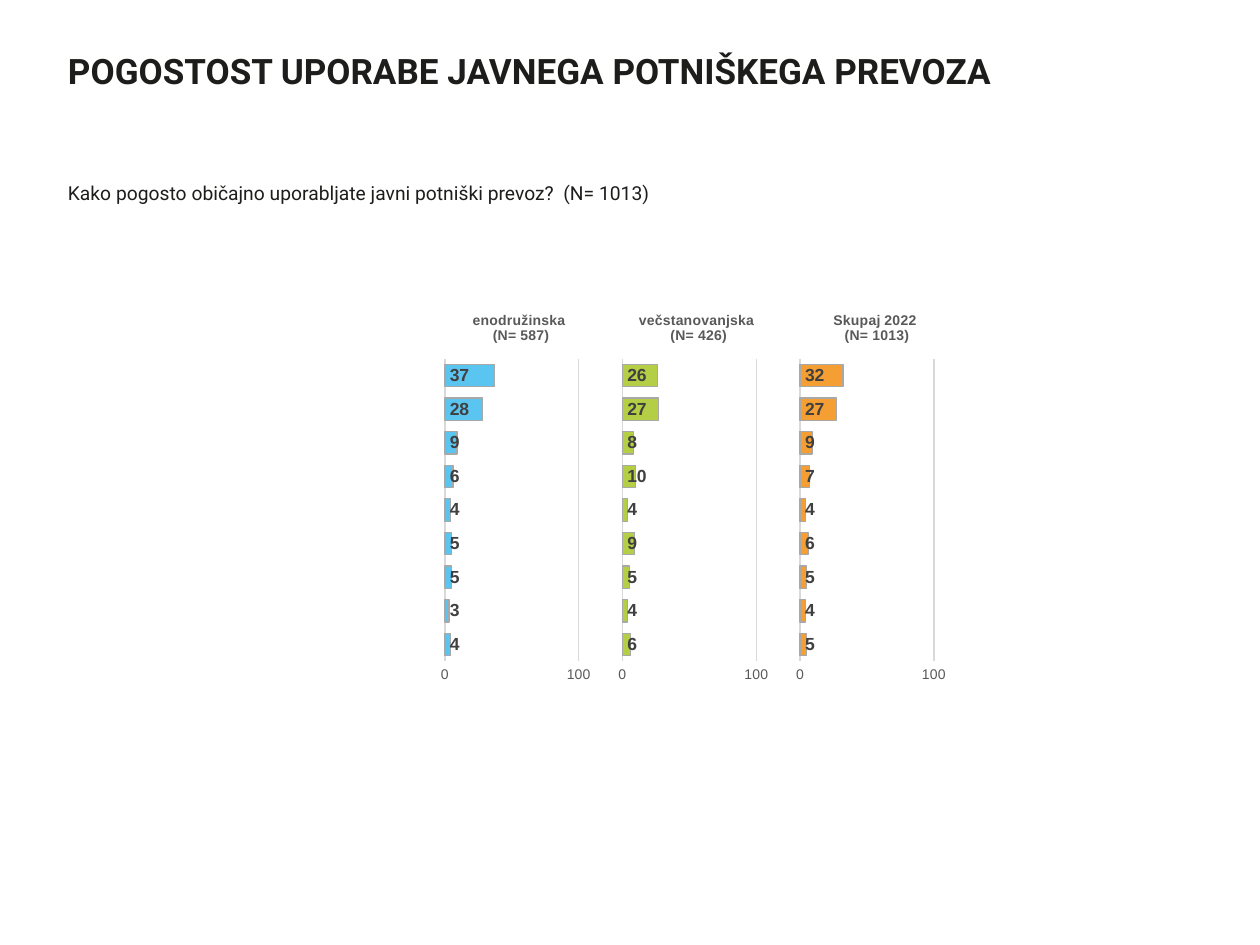
from lxml import etree
from pptx import Presentation
from pptx import util as u
from pptx.chart.data import CategoryChartData
from pptx.dml.color import RGBColor
from pptx.enum import chart as charts, text
from pptx.oxml import parse_xml
from pptx.oxml.ns import nsdecls, qn

INK = RGBColor(0x1D, 0x1D, 0x1B)
GREY = RGBColor(0x59, 0x59, 0x59)
LABEL = RGBColor(0x40, 0x40, 0x40)
GRID = RGBColor(0xD9, 0xD9, 0xD9)
OUTLINE = RGBColor(0xA8, 0xA8, 0xA7)
BLACK = RGBColor(0, 0, 0)
BLUE = RGBColor(0x5B, 0xC5, 0xF2)
GREEN = RGBColor(0xB4, 0xCE, 0x45)
ORANGE = RGBColor(0xF5, 0x9E, 0x33)

TEXT_LEFT, TEXT_WIDTH = 1.24, 20.62
CHART_LEFT, CHART_TOP, CHART_PITCH = 8.51, 5.79, 3.58
CHART_WIDTH, CHART_HEIGHT = 3.76, 8.28

GROUPS = [
    ("enodružinska\n (N= 587)", [4, 3, 5, 5, 4, 6, 9, 28, 37], BLUE, 0.25),
    ("večstanovanjska\n (N= 426)", [6, 4, 5, 9, 4, 10, 8, 27, 26], GREEN, 0.19),
    ("Skupaj 2022\n (N= 1013)", [5, 4, 5, 6, 4, 7, 9, 27, 32], ORANGE, 0.28),
]


def set_all(target, **values):
    for name, value in values.items():
        setattr(target, name, value)


def set_font(font, name, size, color, bold=False):
    set_all(font, name=name, size=u.Pt(size), bold=bold)
    font.color.rgb = color


def set_line(line, color):
    line.color.rgb = color
    line.width = u.Pt(0.75)


def set_layout(element, index, **values):
    for layout in element.findall(qn("c:layout")):
        element.remove(layout)
    layout = parse_xml(f"<c:layout {nsdecls('c')}><c:manualLayout/></c:layout>")
    for name, value in values.items():
        etree.SubElement(layout[0], qn(f"c:{name}")).set("val", str(value))
    element.insert(index, layout)


class SlideBuilder:
    font = "Roboto"
    chart_font = "Arial"

    def __init__(self, presentation):
        self.slide = presentation.slides.add_slide(presentation.slide_layouts[5])

    def fill_text(self, shape, content, top, height, size, bold=False):
        set_all(shape, left=u.Cm(TEXT_LEFT), top=u.Cm(top),
                width=u.Cm(TEXT_WIDTH), height=u.Cm(height))
        margin = u.Cm(0.13)
        frame = shape.text_frame
        set_all(frame, text=content, word_wrap=True, auto_size=text.MSO_AUTO_SIZE.NONE,
                vertical_anchor=text.MSO_ANCHOR.TOP, margin_left=margin,
                margin_right=margin, margin_top=margin, margin_bottom=margin)
        paragraph = frame.paragraphs[0]
        paragraph.alignment = text.PP_ALIGN.LEFT
        set_font(paragraph.runs[0].font, self.font, size, INK, bold)

    def title(self, content):
        self.fill_text(self.slide.shapes.title, content, 0.86, 2.67, 20, True)

    def question(self, content):
        shape = self.slide.shapes.add_textbox(0, 0, u.Cm(1), u.Cm(1))
        self.fill_text(shape, content, 3.53, 2.13, 11)

    def bar_chart(self, left, name, values, color, title_x):
        data = CategoryChartData()
        data.categories = [str(number) for number in range(1, len(values) + 1)]
        data.add_series(name, values)
        chart = self.slide.shapes.add_chart(
            charts.XL_CHART_TYPE.BAR_STACKED, u.Cm(left), u.Cm(CHART_TOP),
            u.Cm(CHART_WIDTH), u.Cm(CHART_HEIGHT), data).chart
        set_font(chart.font, self.chart_font, 10, BLACK)
        chart.has_legend = False
        self.chart_heading(chart, name, title_x)
        self.chart_axes(chart)
        self.chart_bars(chart.plots[0], color)
        space = chart._chartSpace
        set_layout(space.chart.plotArea, 0, layoutTarget="inner", xMode="edge",
                   yMode="edge", x=0.122, y=0.174, w=0.718, h=0.737)
        space.chart.addnext(parse_xml(
            f"<c:spPr {nsdecls('c', 'a')}><a:solidFill><a:srgbClr val='FFFFFF'/>"
            "</a:solidFill><a:ln><a:noFill/></a:ln></c:spPr>"))

    def chart_heading(self, chart, name, title_x):
        chart.has_title = True
        frame = chart.chart_title.text_frame
        frame.text = name
        for paragraph in frame.paragraphs:
            set_font(paragraph.font, self.chart_font, 8, GREY, True)
            for run in paragraph.runs:
                set_font(run.font, self.chart_font, 8, GREY, True)
        set_layout(chart._chartSpace.chart.find(qn("c:title")), 1,
                   xMode="edge", yMode="edge", x=title_x, y=0.045)

    def chart_axes(self, chart):
        chart.category_axis.visible = False
        axis = chart.value_axis
        set_all(axis, minimum_scale=0, maximum_scale=100, major_unit=100,
                has_major_gridlines=True,
                major_tick_mark=charts.XL_TICK_MARK.NONE,
                minor_tick_mark=charts.XL_TICK_MARK.NONE)
        axis.format.line.fill.background()
        set_line(axis.major_gridlines.format.line, GRID)
        set_font(axis.tick_labels.font, self.chart_font, 8, GREY)
        set_all(axis.tick_labels, number_format="0", number_format_is_linked=False)

    def chart_bars(self, plot, color):
        set_all(plot, gap_width=50, overlap=100, vary_by_categories=False)
        series = plot.series[0]
        series.format.fill.solid()
        series.format.fill.fore_color.rgb = color
        set_line(series.format.line, OUTLINE)
        labels = series.data_labels
        set_all(labels, show_value=True, number_format="#;;;",
                number_format_is_linked=False,
                position=charts.XL_LABEL_POSITION.INSIDE_BASE)
        set_font(labels.font, self.chart_font, 10, LABEL, True)


def main():
    presentation = Presentation()
    set_all(presentation, slide_width=u.Cm(25.4), slide_height=u.Cm(19.05))
    builder = SlideBuilder(presentation)
    builder.title("POGOSTOST UPORABE JAVNEGA POTNIŠKEGA PREVOZA")
    builder.question("Kako pogosto običajno uporabljate javni potniški prevoz?  (N= 1013)")
    for column, group in enumerate(GROUPS):
        builder.bar_chart(CHART_LEFT + column * CHART_PITCH, *group)
    presentation.save("out.pptx")


if __name__ == "__main__":
    main()
